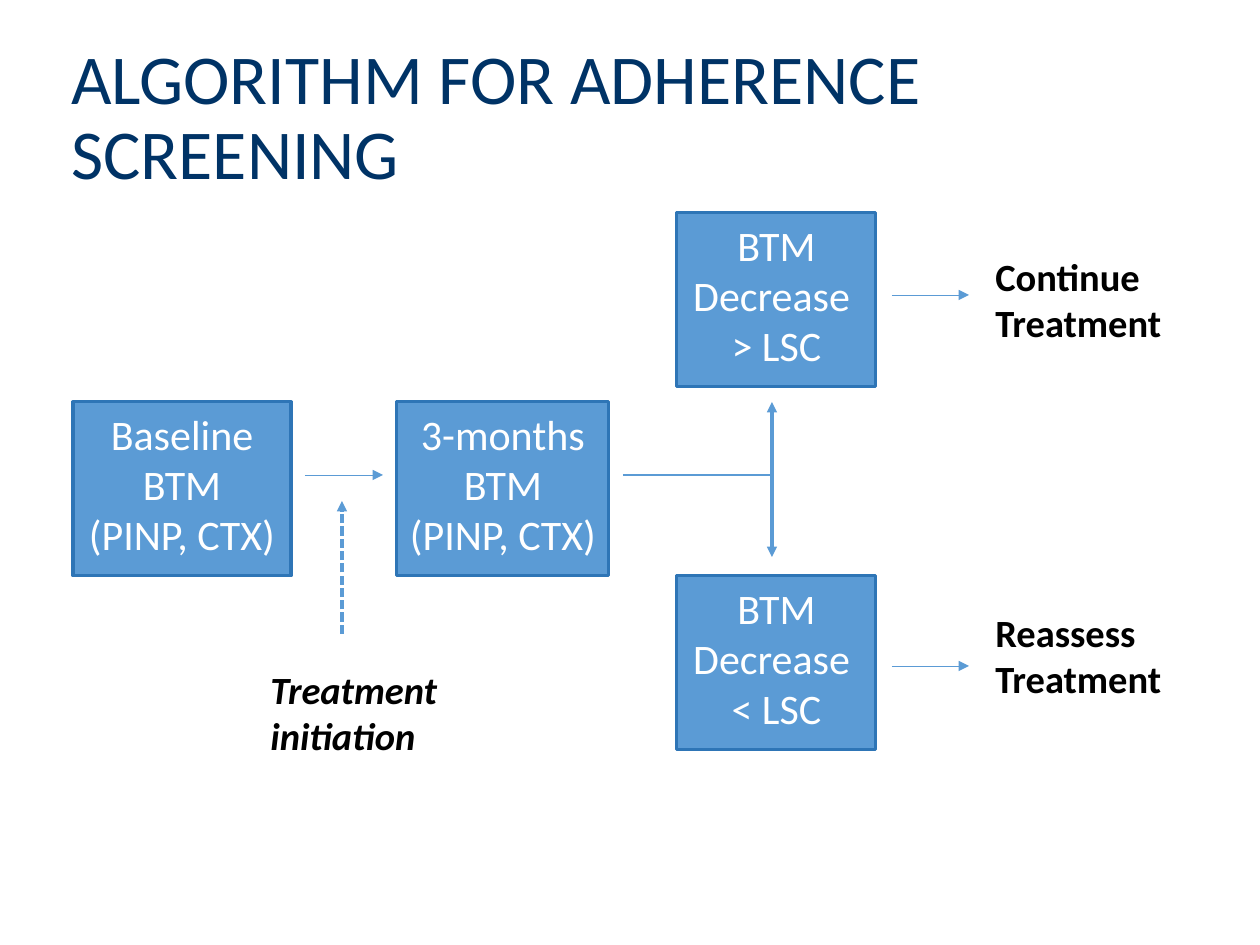
from dataclasses import dataclass

from pptx import Presentation
from pptx.dml.color import RGBColor
from pptx.enum.dml import MSO_LINE
from pptx.enum.shapes import MSO_CONNECTOR, MSO_SHAPE
from pptx.enum.text import MSO_ANCHOR, MSO_AUTO_SIZE, PP_ALIGN
from pptx.oxml.ns import qn
from pptx.slide import Slide
from pptx.text.text import TextFrame
from pptx.util import Emu, Pt
from lxml.etree import SubElement

PX = 914400 / 126
FONT = "Calibri"
COLORS = {
    "title": "003366",
    "box": "5B9BD5",
    "border": "2E75B6",
    "box_text": "FFFFFF",
    "label": "000000",
}
BOX_HEIGHT = 174
MIDDLE_TOP, UPPER_TOP, LOWER_TOP = 402, 213, 576
RESULT_LEFT, RESULT_WIDTH = 677, 199
FLOW_Y = 475
BRANCH_X = 772


@dataclass(frozen=True)
class Box:
    left: int
    top: int
    width: int
    text: str


@dataclass(frozen=True)
class Label:
    left: int
    top: int
    width: int
    height: int
    text: str
    size: int = 22
    color: str = "label"
    bold: bool = True
    italic: bool = False


@dataclass(frozen=True)
class Line:
    start: tuple[int, int]
    end: tuple[int, int]
    weight: float = 0.5
    heads: tuple[str, ...] = ("tailEnd",)
    dashed: bool = False


TITLE = Label(59, 78, 1160, 83, "ALGORITHM FOR ADHERENCE SCREENING", 40, "title", False)

BOXES = [
    Box(73, MIDDLE_TOP, 218, "Baseline\nBTM\n(PINP, CTX)"),
    Box(397, MIDDLE_TOP, 212, "3-months\nBTM\n(PINP, CTX)"),
    Box(RESULT_LEFT, UPPER_TOP, RESULT_WIDTH, "BTM\nDecrease \n> LSC"),
    Box(RESULT_LEFT, LOWER_TOP, RESULT_WIDTH, "BTM\nDecrease \n< LSC"),
]

LABELS = [
    Label(258, 660, 213, 106, "Treatment\ninitiation", italic=True),
    Label(983, 603, 198, 106, "Reassess\nTreatment"),
    Label(983, 247, 198, 106, "Continue\nTreatment"),
]

LINES = [
    Line((305, FLOW_Y), (383, FLOW_Y)),
    Line((BRANCH_X, 402), (BRANCH_X, 557), 1.75, ("headEnd", "tailEnd")),
    Line((623, FLOW_Y), (BRANCH_X, FLOW_Y), 1.5, ()),
    Line((342, 634), (342, 501), 1.75, dashed=True),
    Line((892, 666), (969, 666)),
    Line((892, 295), (969, 295)),
]


def px(length: int) -> Emu:
    return Emu(round(length * PX))


def color(name: str) -> RGBColor:
    return RGBColor.from_string(COLORS[name])


def write(text_frame: TextFrame, text: str, size: int, color_name: str,
          bold: bool = False, italic: bool = False,
          alignment: PP_ALIGN = PP_ALIGN.LEFT) -> None:
    text_frame.word_wrap = True
    text_frame.text = text
    for paragraph in text_frame.paragraphs:
        paragraph.alignment = alignment
        for run in paragraph.runs:
            run.font.name = FONT
            run.font.size = Pt(size)
            run.font.bold = bold
            run.font.italic = italic
            run.font.color.rgb = color(color_name)


def draw_box(slide: Slide, box: Box) -> None:
    shape = slide.shapes.add_shape(
        MSO_SHAPE.RECTANGLE, px(box.left), px(box.top), px(box.width), px(BOX_HEIGHT))
    shape.shadow.inherit = False
    shape.fill.solid()
    shape.fill.fore_color.rgb = color("box")
    shape.line.color.rgb = color("border")
    shape.line.width = Pt(1.75)
    text_frame = shape.text_frame
    write(text_frame, box.text, 24, "box_text", alignment=PP_ALIGN.CENTER)
    text_frame.vertical_anchor = MSO_ANCHOR.TOP
    text_frame.margin_bottom = px(15)
    text_frame.auto_size = MSO_AUTO_SIZE.SHAPE_TO_FIT_TEXT


def draw_label(slide: Slide, label: Label) -> TextFrame:
    shape = slide.shapes.add_textbox(
        px(label.left), px(label.top), px(label.width), px(label.height))
    write(shape.text_frame, label.text, label.size, label.color, label.bold, label.italic)
    return shape.text_frame


def draw_title(slide: Slide) -> None:
    text_frame = draw_label(slide, TITLE)
    text_frame.vertical_anchor = MSO_ANCHOR.MIDDLE
    text_frame.paragraphs[0].line_spacing = 0.9


def draw_line(slide: Slide, line: Line) -> None:
    connector = slide.shapes.add_connector(
        MSO_CONNECTOR.STRAIGHT, *map(px, line.start + line.end))
    connector.line.color.rgb = color("box")
    connector.line.width = Pt(line.weight)
    if line.dashed:
        connector.line.dash_style = MSO_LINE.SQUARE_DOT
    properties = connector.element.spPr
    outline = properties.find(qn("a:ln"))
    for head in line.heads:
        SubElement(outline, qn(f"a:{head}"), type="triangle")
    SubElement(properties, qn("a:effectLst"))


def main() -> None:
    presentation = Presentation()
    presentation.slide_width = px(1260)
    presentation.slide_height = px(945)
    slide = presentation.slides.add_slide(presentation.slide_layouts[6])
    draw_title(slide)
    for box in BOXES:
        draw_box(slide, box)
    for line in LINES:
        draw_line(slide, line)
    for label in LABELS:
        draw_label(slide, label).auto_size = MSO_AUTO_SIZE.SHAPE_TO_FIT_TEXT
    presentation.save("out.pptx")


if __name__ == "__main__":
    main()
